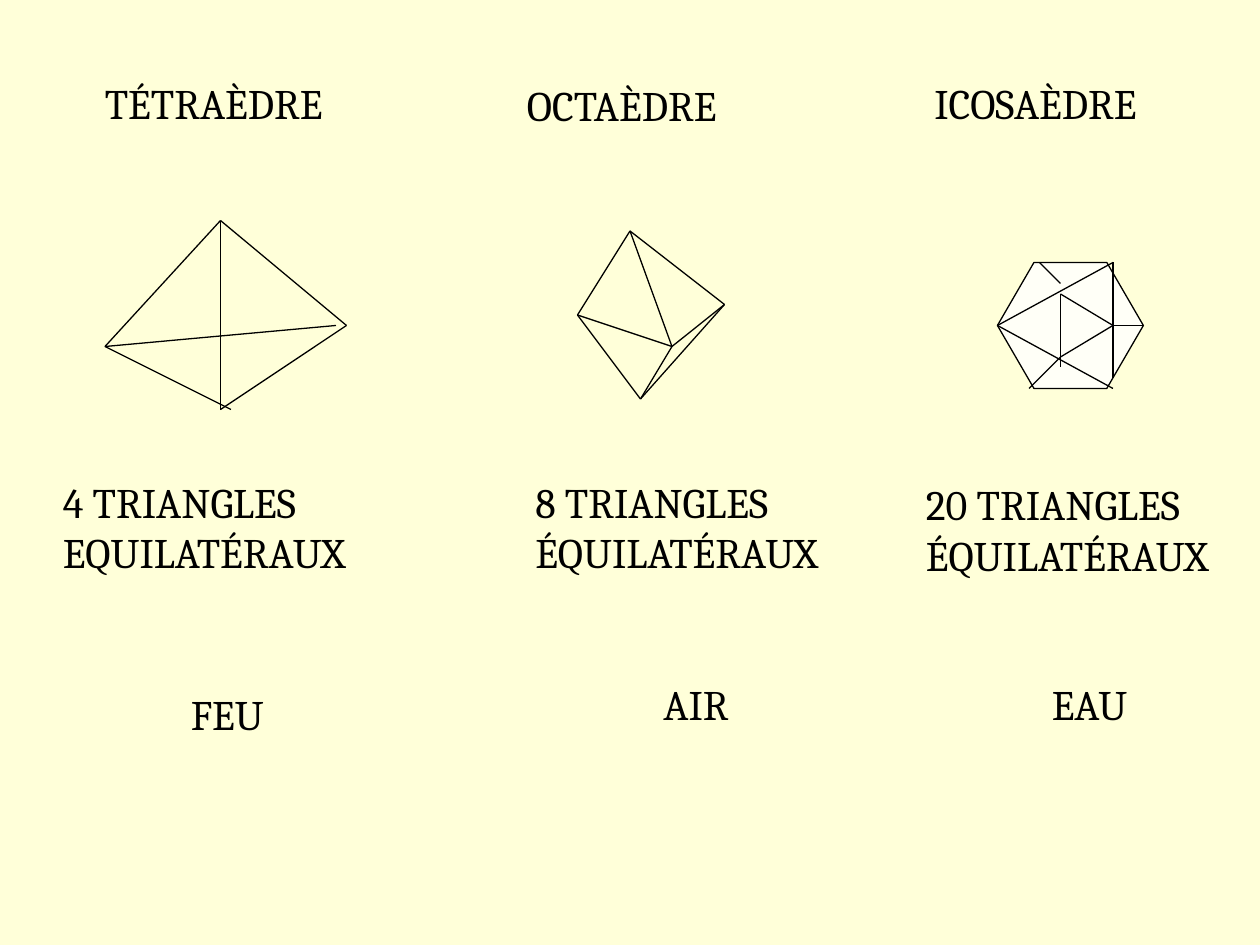
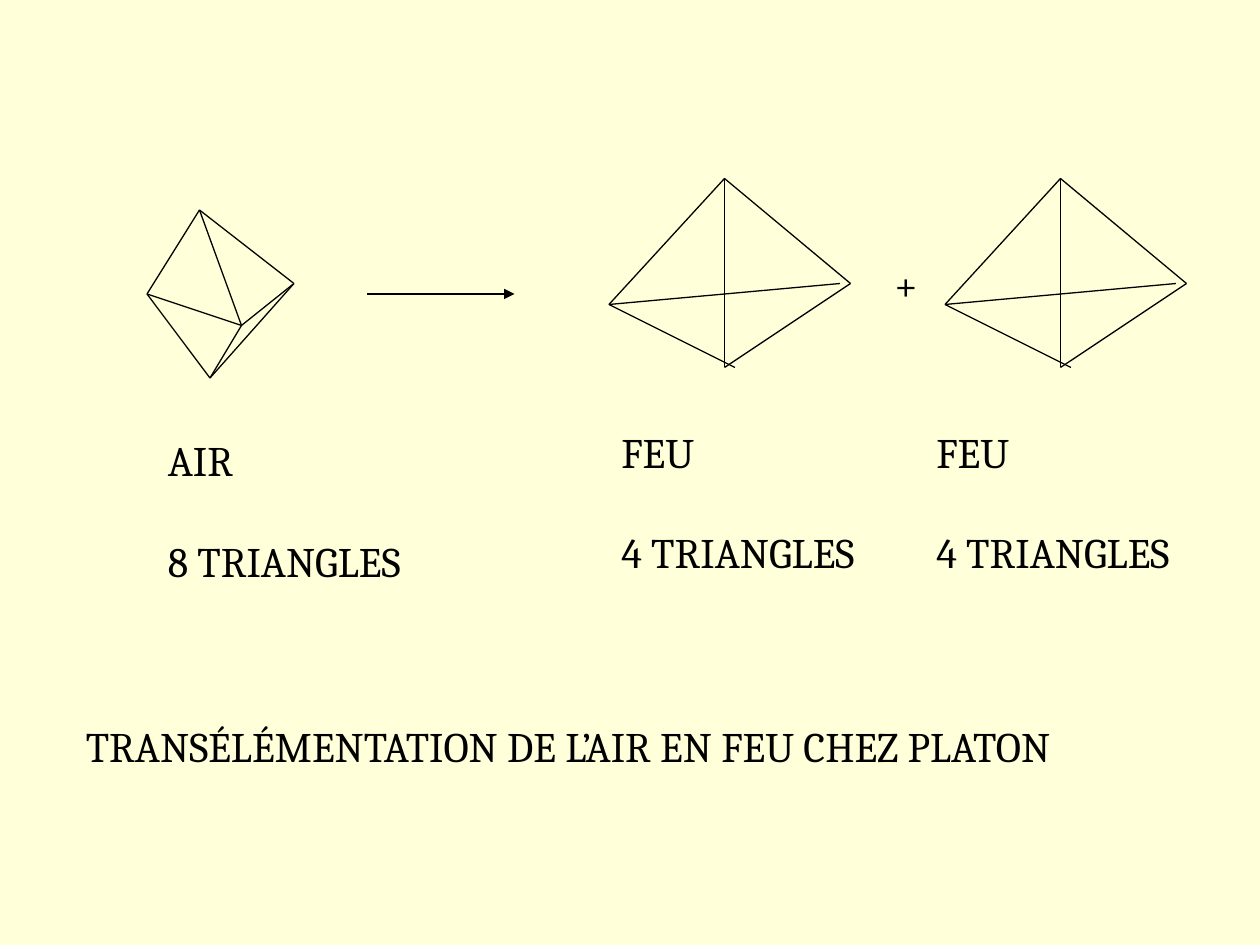
from dataclasses import dataclass

from lxml.etree import SubElement
from pptx import Presentation
from pptx.dml.color import RGBColor
from pptx.enum.shapes import MSO_CONNECTOR, MSO_SHAPE
from pptx.enum.text import MSO_AUTO_SIZE
from pptx.oxml.ns import qn
from pptx.util import Pt

PX = 7620  # EMU per px, 120 px to the inch


@dataclass(frozen=True)
class Theme:
    paper: RGBColor = RGBColor(0xFF, 0xFF, 0xD9)
    facet: RGBColor = RGBColor(0xFF, 0xFF, 0xF7)
    ink: RGBColor = RGBColor(0, 0, 0)
    font: str = "Cambria"
    text_size: Pt = Pt(24)
    line_width: Pt = Pt(0.75)
    blank_line: Pt = Pt(28.8)


theme = Theme()
LINE_HEIGHT, INSETS = 48, 12

# Edges of each solid: (x1, y1, x2, y2), measured from its anchor point.
TETRAHEDRON = [  # anchor: apex
    (0, 0, 0, 180), (0, 0, 120, 100), (0, 180, 120, 100),
    (0, 0, -110, 120), (-110, 120, 10, 180), (-110, 120, 110, 100),
]
OCTAHEDRON = [  # anchor: apex
    (0, 0, -50, 80), (-50, 80, 40, 110), (0, 0, 40, 110), (40, 110, 90, 70),
    (0, 0, 90, 70), (-50, 80, 10, 160), (10, 160, 40, 110), (10, 160, 90, 70),
]
ICOSAHEDRON = [  # anchor: left corner of the hexagon
    (0, 0, 110, 60), (0, 0, 110, -60), (110, -60, 110, 50),
    (40, -60, 60, -40), (30, 60, 60, 30), (140, 0, 110, 0),
    (60, -30, 60, 40), (60, -30, 110, 0), (60, 30, 110, 0),
]


def draw_edges(page, x, y, edges):
    """Draw edges from the anchor (x, y) and return their connectors."""
    connectors = []
    for x1, y1, x2, y2 in edges:
        connector = page.shapes.add_connector(
            MSO_CONNECTOR.STRAIGHT,
            (x + x1) * PX, (y + y1) * PX, (x + x2) * PX, (y + y2) * PX)
        connector.line.color.rgb = theme.ink
        connector.line.width = theme.line_width
        SubElement(connector._element.spPr, qn("a:effectLst"))
        connectors.append(connector)
    return connectors


def write(page, left, top, width, lines, spaced=False):
    """Write one paragraph per line; spaced leaves a line's height between them."""
    rows = 2 * len(lines) - 1 if spaced else len(lines)
    box = page.shapes.add_textbox(
        left * PX, top * PX, width * PX, (INSETS + LINE_HEIGHT * rows) * PX)
    frame = box.text_frame
    frame.word_wrap = False
    frame.auto_size = MSO_AUTO_SIZE.SHAPE_TO_FIT_TEXT
    for index, line in enumerate(lines):
        para = frame.paragraphs[0] if index == 0 else frame.add_paragraph()
        para.text = line
        if spaced and index:
            para.space_before = theme.blank_line
        para.font.name = theme.font
        para.font.size = theme.text_size
        para.font.color.rgb = theme.ink


deck = Presentation()
deck.slide_width, deck.slide_height = 1200 * PX, 900 * PX
pages = []
for _ in range(2):
    page = deck.slides.add_slide(deck.slide_layouts[6])
    page.background.fill.solid()
    page.background.fill.fore_color.rgb = theme.paper
    pages.append(page)
solids_page, change_page = pages

# The three solids, their faces and their elements
draw_edges(solids_page, 210, 210, TETRAHEDRON)
draw_edges(solids_page, 600, 220, OCTAHEDRON)
hexagon = solids_page.shapes.add_shape(
    MSO_SHAPE.HEXAGON, 950 * PX, 250 * PX, 139 * PX, 120 * PX)
hexagon.shadow.inherit = False
hexagon.adjustments[0] = 0.29
hexagon.fill.solid()
hexagon.fill.fore_color.rgb = theme.facet
hexagon.line.color.rgb = theme.ink
hexagon.line.width = theme.line_width
draw_edges(solids_page, 950, 310, ICOSAHEDRON)

for left, top, width, lines in [
    (88, 68, 258, ["TÉTRAÈDRE"]),
    (490, 70, 238, ["OCTAÈDRE"]),
    (878, 68, 248, ["ICOSAÈDRE"]),
    (48, 448, 335, ["4 TRIANGLES", "EQUILATÉRAUX"]),
    (498, 448, 335, ["8 TRIANGLES", "ÉQUILATÉRAUX"]),
    (870, 450, 335, ["20 TRIANGLES", "ÉQUILATÉRAUX"]),
    (170, 650, 100, ["FEU"]),
    (620, 640, 94, ["AIR"]),
    (990, 640, 107, ["EAU"]),
]:
    write(solids_page, left, top, width, lines)

# Air turning into fire
draw_edges(change_page, 190, 200, OCTAHEDRON)
[arrow] = draw_edges(change_page, 350, 280, [(0, 0, 140, 0)])
SubElement(arrow.line._get_or_add_ln(), qn("a:tailEnd"), type="triangle")
for apex in (690, 1010):
    draw_edges(change_page, apex, 170, TETRAHEDRON)
write(change_page, 840, 240, 47, ["+"])
for left, top, element, faces in [
    (148, 408, "AIR", 8), (580, 400, "FEU", 4), (880, 400, "FEU", 4),
]:
    write(change_page, left, top, 276, [element, f"{faces} TRIANGLES"], spaced=True)
write(change_page, 70, 680, 1078, ["TRANSÉLÉMENTATION DE L’AIR EN FEU CHEZ PLATON"])

deck.save("out.pptx")
